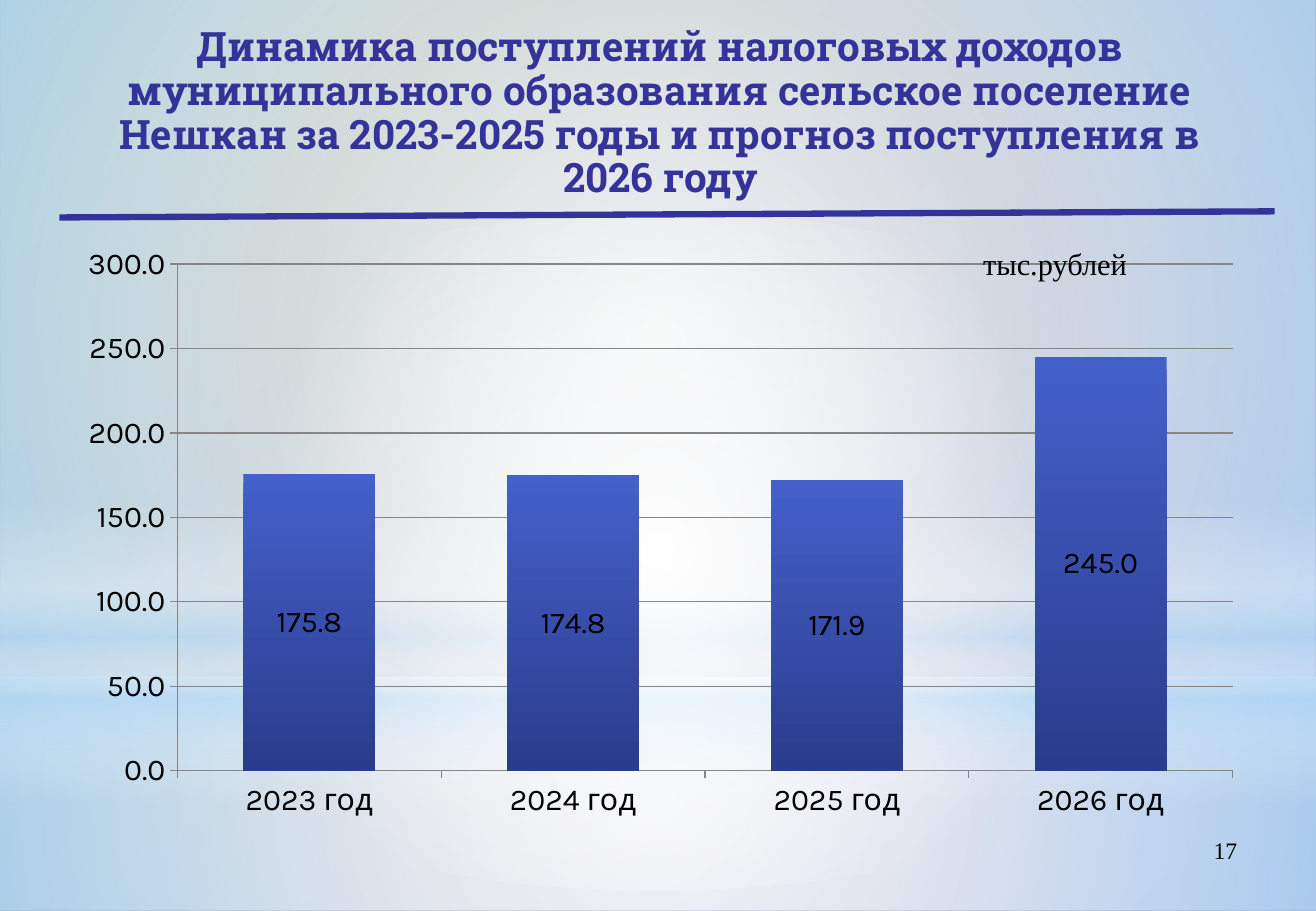
from dataclasses import dataclass

import pptx
import pptx.chart.data
import pptx.dml.color
import pptx.dml.fill
import pptx.enum.chart
import pptx.enum.shapes
import pptx.enum.text
import pptx.oxml
import pptx.oxml.ns
import pptx.slide
import pptx.text.text
import pptx.util
from lxml import etree

RGBColor = pptx.dml.color.RGBColor
ShapeKind = pptx.enum.shapes.MSO_SHAPE
Align = pptx.enum.text.PP_ALIGN

SLIDE_WIDTH = pptx.util.Inches(10.84)
SLIDE_HEIGHT = pptx.util.Inches(7.5)

INDIGO = RGBColor(0x33, 0x33, 0x99)
BLACK = RGBColor(0, 0, 0)
WHITE = RGBColor(0xFF, 0xFF, 0xFF)
SKY = RGBColor(0xB4, 0xDC, 0xFA)
SAGE = RGBColor(0x96, 0xAB, 0x94)
LAVENDER = RGBColor(0x84, 0x88, 0xC4)
GRID_GREY = RGBColor(0x86, 0x86, 0x86)
BAR_TOP = RGBColor(0x44, 0x60, 0xCA)
BAR_BOTTOM = RGBColor(0x2A, 0x3C, 0x8C)

TITLE_FONT, CHART_FONT, NOTE_FONT = "Roboto Slab", "Karla", "Times New Roman"


@dataclass(frozen=True)
class Area:
    """A rectangle in percent of the slide's width and height."""
    left: float
    top: float
    width: float
    height: float

    def lengths(self) -> tuple[int, int, int, int]:
        return across(self.left), down(self.top), across(self.width), down(self.height)


@dataclass(frozen=True)
class Stop:
    position: int
    color: RGBColor
    opacity: int


@dataclass(frozen=True)
class Glow:
    kind: ShapeKind
    area: Area
    stops: tuple[Stop, ...]
    radial: bool = True


@dataclass(frozen=True)
class Note:
    text: str
    area: Area
    size: int
    align: Align
    wrap: bool


GLOWS = (
    Glow(ShapeKind.RECTANGLE, Area(0, 74.4, 100, 25.6),
         (Stop(0, WHITE, 91), Stop(37, WHITE, 76), Stop(100, SKY, 79))),
    Glow(ShapeKind.RECTANGLE, Area(0, 0, 100, 74.4),
         (Stop(0, WHITE, 89), Stop(48, WHITE, 62), Stop(100, SKY, 79))),
    Glow(ShapeKind.RECTANGLE, Area(0, 54.93, 100, 33.33),
         (Stop(0, WHITE, 0), Stop(29, WHITE, 30), Stop(45, SKY, 40),
          Stop(55, WHITE, 26), Stop(65, SKY, 60), Stop(100, WHITE, 0)), radial=False),
    Glow(ShapeKind.OVAL, Area(0, 23.33, 100, 74.4),
         (Stop(0, WHITE, 100), Stop(56, WHITE, 0))),
)
NOTES = (
    Note("17", Area(71.59, 91.07, 23.34, 6.93), 14, Align.RIGHT, True),
    Note("тыс.рублей", Area(73.8, 26.27, 12.92, 5.33), 18, Align.LEFT, False),
)
TITLE = ("Динамика поступлений налоговых доходов муниципального образования сельское "
         "поселение Нешкан за 2023-2025 годы и прогноз поступления в 2026 году")
TITLE_AREA = Area(5.17, 2, 89.94, 21.07)
CHART_AREA = Area(4.8, 25.73, 90.5, 65.2)
REVENUE = {"2023 год": 175.8, "2024 год": 174.8, "2025 год": 171.9, "2026 год": 245}
PLOT_LAYOUT = {"x": 0.096, "y": 0.05, "w": 0.886, "h": 0.853}


def across(percent: float) -> int:
    return round(SLIDE_WIDTH * percent / 100)


def down(percent: float) -> int:
    return round(SLIDE_HEIGHT * percent / 100)


def style_font(font: pptx.text.text.Font, name: str, size: float, color: RGBColor) -> None:
    font.name, font.size = name, pptx.util.Pt(size)
    font.color.rgb = color


def fill_gradient(fill: pptx.dml.fill.FillFormat, start: RGBColor, end: RGBColor, angle: int) -> None:
    fill.gradient()
    fill.gradient_angle = angle
    for stop, color, position in zip(fill.gradient_stops, (start, end), (0, 1)):
        stop.color.rgb, stop.position = color, position


def add_glow(slide: pptx.slide.Slide, glow: Glow) -> None:
    shape = slide.shapes.add_shape(glow.kind, *glow.area.lengths())
    shape.shadow.inherit = False
    shape.line.fill.background()
    shape.fill.gradient()
    stops = "".join(
        f'<a:gs pos="{stop.position * 1000}"><a:srgbClr val="{stop.color}">'
        f'<a:alpha val="{stop.opacity * 1000}"/></a:srgbClr></a:gs>' for stop in glow.stops)
    direction = ('<a:path path="circle"><a:fillToRect l="50000" t="50000" r="50000" b="50000"/></a:path>'
                 if glow.radial else '<a:lin ang="5400000" scaled="0"/>')
    gradient = pptx.oxml.parse_xml(
        f'<a:gradFill {pptx.oxml.ns.nsdecls("a")} rotWithShape="1">'
        f'<a:gsLst>{stops}</a:gsLst>{direction}</a:gradFill>')
    properties = shape.element.spPr
    properties.replace(properties.find(pptx.oxml.ns.qn("a:gradFill")), gradient)


def place_title(slide: pptx.slide.Slide) -> None:
    title = slide.shapes.title
    title.left, title.top, title.width, title.height = TITLE_AREA.lengths()
    frame = title.text_frame
    frame.text = TITLE
    frame.word_wrap = True
    frame.auto_size = pptx.enum.text.MSO_AUTO_SIZE.NONE
    frame.vertical_anchor = pptx.enum.text.MSO_ANCHOR.MIDDLE
    para = frame.paragraphs[0]
    para.alignment, para.line_spacing = Align.CENTER, 0.9
    style_font(para.runs[0].font, TITLE_FONT, 24, INDIGO)
    para.runs[0].font.bold = True
    # Bring the title in front of the backdrop
    title.element.getparent().append(title.element)


def add_title_rule(slide: pptx.slide.Slide) -> None:
    rule = slide.shapes.add_connector(pptx.enum.shapes.MSO_CONNECTOR.STRAIGHT,
                                      across(4.52), down(23.87), across(96.86), down(23.2))
    rule.line.color.rgb = INDIGO
    rule.line.width = pptx.util.Pt(3.75)
    etree.SubElement(rule.element.spPr, pptx.oxml.ns.qn("a:effectLst"))


def add_revenue_chart(slide: pptx.slide.Slide) -> None:
    data = pptx.chart.data.CategoryChartData(number_format="0.0")
    data.categories = list(REVENUE)
    data.add_series("Налоговые доходы", list(REVENUE.values()))
    chart = slide.shapes.add_chart(pptx.enum.chart.XL_CHART_TYPE.COLUMN_STACKED,
                                   *CHART_AREA.lengths(), data).chart
    chart.has_legend = chart.has_title = False
    style_font(chart.font, CHART_FONT, 17.9, BLACK)

    # Axes and gridlines
    values = chart.value_axis
    values.minimum_scale, values.maximum_scale, values.major_unit = 0, 300, 50
    values.has_major_gridlines = True
    values.tick_labels.number_format = "0.0"
    values.tick_labels.number_format_is_linked = False
    for axis in (values, chart.category_axis):
        axis.major_tick_mark = pptx.enum.chart.XL_TICK_MARK.OUTSIDE
    for line in (values.format.line, chart.category_axis.format.line,
                 values.major_gridlines.format.line):
        line.color.rgb, line.width = GRID_GREY, pptx.util.Pt(0.75)

    # Columns and their labels
    plot = chart.plots[0]
    plot.gap_width, plot.overlap, plot.vary_by_categories = 100, 100, False
    fill_gradient(plot.series[0].format.fill, BAR_TOP, BAR_BOTTOM, 270)
    plot.has_data_labels = True
    labels = plot.data_labels
    labels.show_value = True
    labels.number_format, labels.number_format_is_linked = "0.0", False
    labels.position = pptx.enum.chart.XL_LABEL_POSITION.CENTER
    style_font(labels.font, CHART_FONT, 17.9, BLACK)

    # Fixed inner plot area
    area = chart.element.chart.plotArea
    for layout in area.findall(pptx.oxml.ns.qn("c:layout")):
        area.remove(layout)
    modes = "".join(f'<c:{side}Mode val="edge"/>' for side in "xy")
    shares = "".join(f'<c:{side} val="{share}"/>' for side, share in PLOT_LAYOUT.items())
    area.insert(0, pptx.oxml.parse_xml(
        f'<c:layout {pptx.oxml.ns.nsdecls("c")}><c:manualLayout>'
        f'<c:layoutTarget val="inner"/>{modes}{shares}</c:manualLayout></c:layout>'))


def add_note(slide: pptx.slide.Slide, note: Note) -> None:
    frame = slide.shapes.add_textbox(*note.area.lengths()).text_frame
    frame.text, frame.word_wrap = note.text, note.wrap
    para = frame.paragraphs[0]
    para.alignment = note.align
    style_font(para.runs[0].font, NOTE_FONT, note.size, BLACK)


def main() -> None:
    deck = pptx.Presentation()
    deck.slide_width, deck.slide_height = SLIDE_WIDTH, SLIDE_HEIGHT
    page = deck.slides.add_slide(deck.slide_layouts.get_by_name("Title Only"))
    fill_gradient(page.background.fill, SAGE, LAVENDER, 315)
    for glow in GLOWS:
        add_glow(page, glow)
    place_title(page)
    add_title_rule(page)
    add_revenue_chart(page)
    for note in NOTES:
        add_note(page, note)
    deck.save("out.pptx")


if __name__ == "__main__":
    main()
